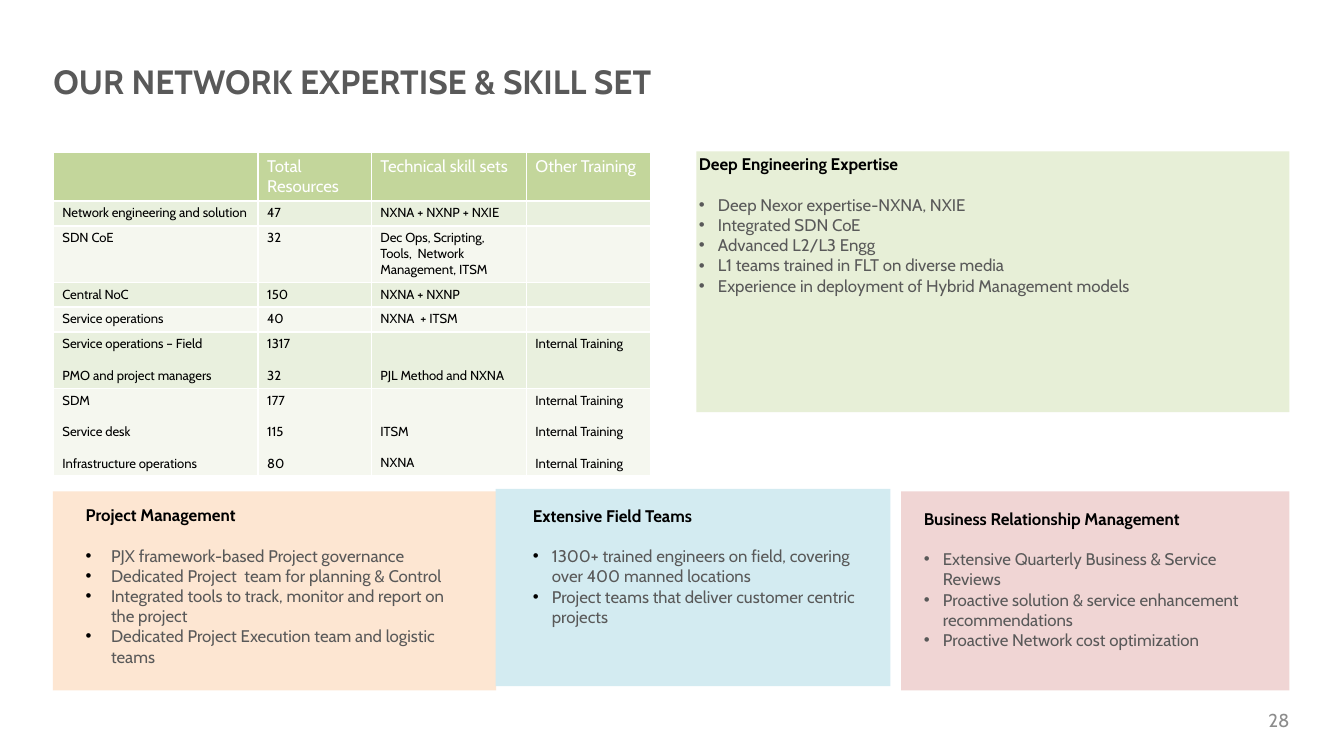
import pptx
import pptx.dml.color
import pptx.enum.shapes
import pptx.enum.text
import pptx.oxml.ns
import pptx.util
from lxml import etree
from pptx.util import Cm, Pt

FONT = "Cabin"
GREY = "595959"
BLACK = "000000"
WHITE = "FFFFFF"
HEADER_FILL = "C3D69B"
BAND_FILLS = ("E9F0DE", "F5F7EF")
TOP = pptx.enum.text.MSO_ANCHOR.TOP
MIDDLE = pptx.enum.text.MSO_ANCHOR.MIDDLE
BOTTOM = pptx.enum.text.MSO_ANCHOR.BOTTOM

TITLE = "OUR NETWORK EXPERTISE & SKILL SET"
PAGE_NUMBER = "28"

TABLE_ORIGIN = (1.01, 2.87)
COLUMN_WIDTHS = (3.87, 2.14, 2.93, 2.34)
ROW_HEIGHTS = (0.93, 0.47, 1.07, 0.46, 0.47, 1.07, 1.63)
TRAINING = "Internal Training"
TABLE_ROWS = [
    ("", "Total Resources", "Technical skill sets", "Other Training"),
    ("Network engineering and solution", "47", "NXNA + NXNP + NXIE", ""),
    ("SDN CoE", "32", "Dec Ops, Scripting, Tools,  Network Management, ITSM", ""),
    ("Central NoC", "150", "NXNA + NXNP", ""),
    ("Service operations", "40", "NXNA  + ITSM", ""),
    ("Service operations – Field\nPMO and project managers", "1317\n32",
     "PJL Method and NXNA", TRAINING),
    ("SDM\nService desk\nInfrastructure operations", "177\n115\n80",
     "ITSM\nNXNA", "\n".join([TRAINING] * 3)),
]
BOTTOM_CELLS = {(5, 2), (6, 2)}

# Boxes are left, top, width, height; without a text box the panel holds the text
PANELS = [
    {"box": (13.16, 2.86, 11.21, 4.93), "fill": "E7EFD7", "text_box": None,
     "insets": (0.05, 0.05), "indent": 0.36, "bullet": GREY,
     "heading": "Deep Engineering Expertise",
     "points": ["Deep Nexor expertise-NXNA, NXIE",
                "Integrated SDN CoE",
                "Advanced L2/L3 Engg",
                "L1 teams trained in FLT on diverse media",
                "Experience in deployment of Hybrid Management models"]},
    {"box": (1, 9.29, 8.38, 3.76), "fill": "FDE6D2", "text_box": (1.37, 9.41, 7.72, 3.18),
     "insets": (0.25, 0.13), "indent": 0.48, "bullet": BLACK,
     "heading": "Project Management",
     "points": ["PJX framework-based Project governance",
                "Dedicated Project  team for planning & Control",
                "Integrated tools to track, monitor and report on the project",
                "Dedicated Project Execution team and logistic teams"]},
    {"box": (9.37, 9.24, 7.46, 3.73), "fill": "D3EBF1", "text_box": (10.02, 9.5, 6.48, 2.29),
     "insets": (0.05, 0.05), "indent": 0.36, "bullet": BLACK,
     "heading": "Extensive Field Teams",
     "points": ["1300+ trained engineers on field, covering over 400 manned locations",
                "Project teams that deliver customer centric projects"]},
    {"box": (17.03, 9.29, 7.34, 3.76), "fill": "F0D5D4", "text_box": (17.41, 9.56, 6.71, 3.18),
     "insets": (0.05, 0.05), "indent": 0.36, "bullet": GREY,
     "heading": "Business Relationship Management",
     "points": ["Extensive Quarterly Business & Service Reviews",
                "Proactive solution & service enhancement recommendations",
                "Proactive Network cost optimization"]},
]


def rgb(color):
    return pptx.dml.color.RGBColor.from_string(color)


def add_element(parent, tag, **attributes):
    return etree.SubElement(parent, pptx.oxml.ns.qn(tag), attributes)


def format_runs(paragraph, size, color, bold=False):
    for run in paragraph.runs:
        run.font.name = FONT
        run.font.size = Pt(size)
        run.font.bold = bold
        run.font.color.rgb = rgb(color)


def set_margins(target, left, top, right, bottom):
    """Set the inner margins, in cm, of a text frame or a table cell."""
    target.margin_left, target.margin_top = Cm(left), Cm(top)
    target.margin_right, target.margin_bottom = Cm(right), Cm(bottom)


def add_bullet(paragraph, indent, color):
    properties = paragraph._p.get_or_add_pPr()
    properties.set("marL", str(Cm(indent)))
    properties.set("indent", str(-Cm(indent)))
    add_element(add_element(properties, "a:buClr"), "a:srgbClr", val=color)
    add_element(properties, "a:buFont", typeface="Arial")
    add_element(properties, "a:buChar", char="•")


def add_panel(slide, panel):
    shapes = slide.shapes.add_group_shape().shapes if panel["text_box"] else slide.shapes
    rectangle = shapes.add_shape(pptx.enum.shapes.MSO_SHAPE.RECTANGLE, *map(Cm, panel["box"]))
    rectangle.shadow.inherit = False
    rectangle.fill.solid()
    rectangle.fill.fore_color.rgb = rgb(panel["fill"])
    rectangle.line.fill.background()
    holder = rectangle
    if panel["text_box"]:
        holder = shapes.add_textbox(*map(Cm, panel["text_box"]))
    frame = holder.text_frame
    frame.text = "\n".join([panel["heading"]] + panel["points"])
    frame.word_wrap = True
    frame.vertical_anchor = TOP
    set_margins(frame, *panel["insets"] * 2)
    heading, *points = frame.paragraphs
    heading.alignment = pptx.enum.text.PP_ALIGN.LEFT
    heading.space_after = Pt(10.9)
    format_runs(heading, 9, BLACK, bold=True)
    for point in points:
        add_bullet(point, panel["indent"], panel["bullet"])
        point.alignment = pptx.enum.text.PP_ALIGN.LEFT
        format_runs(point, 9, GREY)


def style_cell(cell, fill):
    properties = cell._tc.get_or_add_tcPr()
    for side in "LRTB":
        line = add_element(properties, f"a:ln{side}", w=str(Pt(1)))
        add_element(add_element(line, "a:solidFill"), "a:srgbClr", val=WHITE)
    cell.fill.solid()
    cell.fill.fore_color.rgb = rgb(fill)
    set_margins(cell, 0.17, 0.08, 0.17, 0.08)


def add_skill_table(slide):
    table = slide.shapes.add_table(
        len(TABLE_ROWS), len(COLUMN_WIDTHS), *map(Cm, TABLE_ORIGIN),
        Cm(sum(COLUMN_WIDTHS)), Cm(sum(ROW_HEIGHTS))).table
    for column, width in zip(table.columns, COLUMN_WIDTHS):
        column.width = Cm(width)
    for row, height in zip(table.rows, ROW_HEIGHTS):
        row.height = Cm(height)
    for i, texts in enumerate(TABLE_ROWS):
        header = i == 0
        size, color = (9, WHITE) if header else (7, BLACK)
        fill = HEADER_FILL if header else BAND_FILLS[(i - 1) % 2]
        for j, text in enumerate(texts):
            cell = table.cell(i, j)
            style_cell(cell, fill)
            cell.vertical_anchor = BOTTOM if (i, j) in BOTTOM_CELLS else TOP
            cell.text_frame.text = text
            for k, paragraph in enumerate(cell.text_frame.paragraphs):
                if k:
                    paragraph.space_before = Pt(8.5)
                format_runs(paragraph, size, color)
                # Keeps empty cells from stretching their row
                add_element(paragraph._p, "a:endParaRPr", sz=str(size * 100))


def add_title(slide):
    title = slide.shapes.title
    title.left, title.top, title.width, title.height = map(Cm, (1.01, 1.02, 20.93, 1.02))
    frame = title.text_frame
    frame.text = TITLE
    frame.vertical_anchor = MIDDLE
    set_margins(frame, 0, 0.13, 0.25, 0.13)
    frame.paragraphs[0].alignment = pptx.enum.text.PP_ALIGN.LEFT
    format_runs(frame.paragraphs[0], 18, GREY, bold=True)


def add_page_number(slide):
    frame = slide.shapes.add_textbox(*map(Cm, (23.02, 13.24, 1.35, 0.76))).text_frame
    frame.text = PAGE_NUMBER
    frame.word_wrap = True
    frame.vertical_anchor = MIDDLE
    set_margins(frame, 0.25, 0.13, 0, 0.13)
    frame.paragraphs[0].alignment = pptx.enum.text.PP_ALIGN.RIGHT
    format_runs(frame.paragraphs[0], 10, "8C8C8C")


def main():
    presentation = pptx.Presentation()
    presentation.slide_width, presentation.slide_height = Cm(25.4), Cm(14.29)
    slide = presentation.slides.add_slide(presentation.slide_layouts[5])
    add_title(slide)
    add_page_number(slide)
    for panel in PANELS:
        add_panel(slide, panel)
    add_skill_table(slide)
    presentation.save("out.pptx")


if __name__ == "__main__":
    main()
